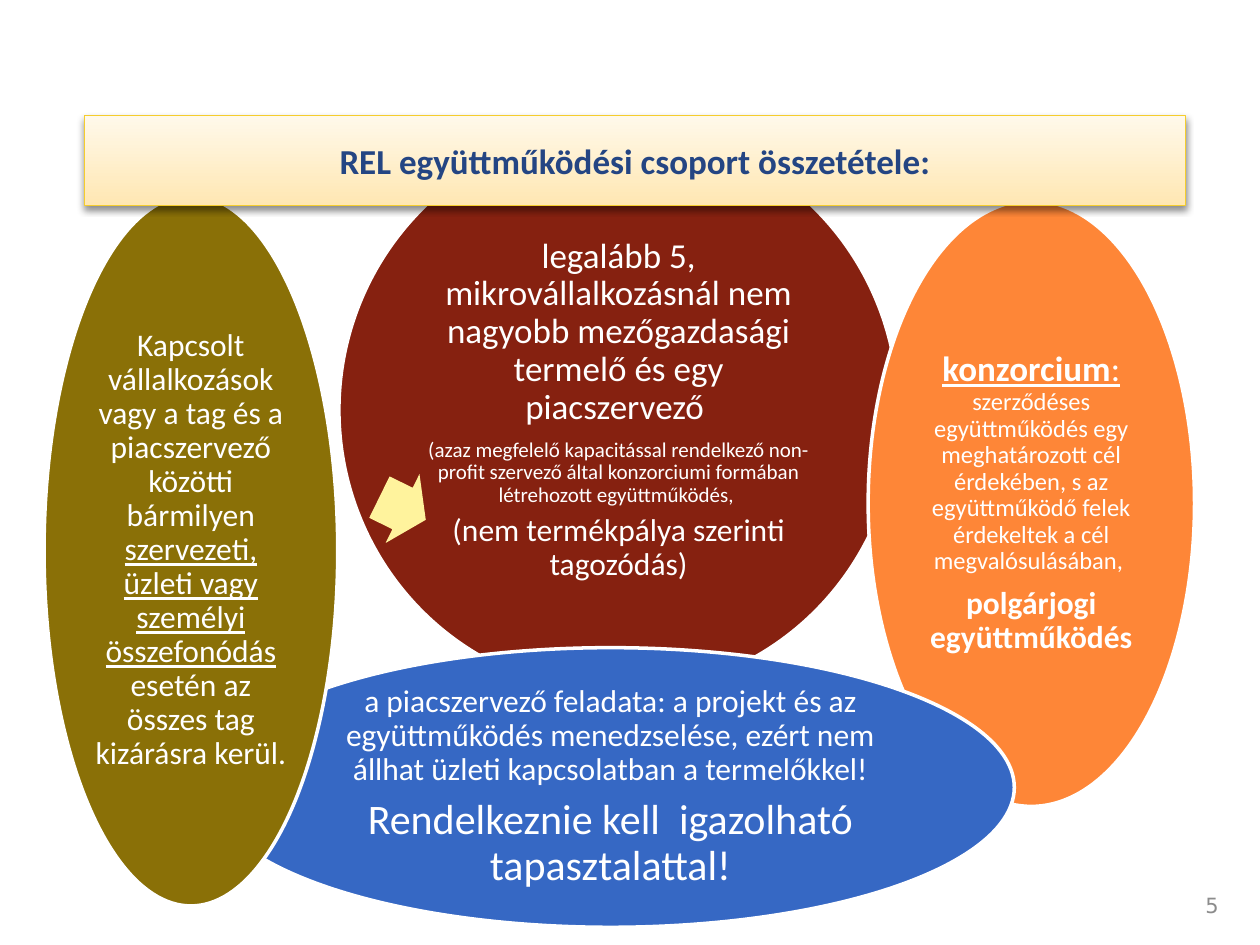
"""Build the slide on the make-up of a REL cooperation group."""
from lxml.etree import SubElement
from pptx import Presentation
from pptx.dml.color import RGBColor
from pptx.enum.shapes import MSO_SHAPE as Shape
from pptx.enum.text import MSO_ANCHOR as Anchor, PP_ALIGN as Align
from pptx.oxml.ns import qn
from pptx.util import Pt


def color(value):
    return RGBColor.from_string(value)


def write(para, text, size, ink="FFFFFF", face="Calibri", bold=False, underline=False):
    span = para.add_run()
    span.text = text
    font = span.font
    font.name, font.size, font.bold, font.underline = face, Pt(size), bold, underline
    font.color.rgb = color(ink)


deck = Presentation()
deck.slide_width, deck.slide_height = Pt(720), Pt(540)
page = deck.slides.add_slide(deck.slide_layouts[6])

ellipses = [
    ((193.7, 72.7, 319.7, 323.3), "862110", [
        [("legalább 5, mikrovállalkozásnál nem nagyobb mezőgazdasági termelő és egy piacszervező ", 20, {})],
        [("(azaz megfelelő kapacitással rendelkező non-profit szervező által konzorciumi formában "
          "létrehozott együttműködés, ", 12, {})],
        [("(nem termékpálya szerinti tagozódás)", 18, {})],
    ]),
    ((496.1, 114.5, 186.5, 346.3), "FE8637", [
        [("konzorcium", 20, {"bold": True, "underline": True}),
         (":", 20, {"underline": True}),
         (" szerződéses együttműködés egy meghatározott cél érdekében, s az együttműködő felek "
          "érdekeltek a cél megvalósulásában, ", 14, {})],
        [("polgárjogi együttműködés", 18, {"bold": True})],
    ]),
    ((118.1, 370.1, 461.5, 159.8), "3668C4", [
        [("a piacszervező feladata: a projekt és az együttműködés menedzselése, ezért nem állhat "
          "üzleti kapcsolatban a termelőkkel!", 18, {})],
        [("Rendelkeznie kell  igazolható tapasztalattal!", 24, {})],
    ]),
    ((25.2, 111.6, 167.8, 406.1), "8A7007", [
        [("Kapcsolt vállalkozások vagy a tag és a piacszervező közötti bármilyen ", 18, {}),
         ("szervezeti, üzleti vagy személyi összefonódás ", 18, {"underline": True}),
         ("esetén az összes tag kizárásra kerül.", 18, {})],
    ]),
]

for bounds, fill, paragraphs in ellipses:
    ellipse = page.shapes.add_shape(Shape.OVAL, *map(Pt, bounds))
    ellipse.shadow.inherit = False
    ellipse.fill.solid()
    ellipse.fill.fore_color.rgb = color(fill)
    ellipse.line.color.rgb = color("FFFFFF")
    ellipse.line.width = Pt(2)
    frame = ellipse.text_frame
    frame.word_wrap = True
    frame.vertical_anchor = Anchor.MIDDLE
    frame.margin_left = frame.margin_right = frame.margin_top = frame.margin_bottom = Pt(2)
    for index, spans in enumerate(paragraphs):
        para = frame.add_paragraph() if index else frame.paragraphs[0]
        para.alignment = Align.CENTER
        para.line_spacing = 0.9
        para.space_after = Pt(round(0.35 * spans[0][1], 1))
        for text, size, style in spans:
            write(para, text, size, **style)

arrow = page.shapes.add_shape(Shape.RIGHT_ARROW, Pt(215.3), Pt(268.6), Pt(29.5), Pt(43.9))
arrow.shadow.inherit = False
arrow.adjustments[0], arrow.adjustments[1] = 0.6, 0.5
arrow.rotation = 26.1
arrow.fill.solid()
arrow.fill.fore_color.rgb = color("FFF39D")
arrow.line.fill.background()

number = page.shapes.add_textbox(Pt(535.7), Pt(502.6), Pt(167.8), Pt(28.8)).text_frame
number.word_wrap = True
number.vertical_anchor = Anchor.MIDDLE
number.paragraphs[0].alignment = Align.RIGHT
write(number.paragraphs[0], "5", 12, ink="8C8C8C", face="DejaVu Sans")

banner = page.shapes.add_shape(Shape.RECTANGLE, Pt(48.2), Pt(66.2), Pt(629.3), Pt(51.1))
banner.fill.gradient()
banner.fill.gradient_angle = 270
for stop, tint in zip(banner.fill.gradient_stops, ("FFF9EA", "FFE7B3")):
    stop.color.rgb = color(tint)
banner.line.color.rgb = color("F5CD2D")
banner.line.width = Pt(0.75)
banner.shadow.inherit = False
effects = banner.element.spPr.find(qn("a:effectLst"))
shadow = SubElement(effects, qn("a:outerShdw"), blurRad=str(Pt(4)), dist=str(Pt(2)),
                    dir="5400000", rotWithShape="0")
shade = SubElement(shadow, qn("a:srgbClr"), val="000000")
SubElement(shade, qn("a:alpha"), val="45000")
title = banner.text_frame
title.word_wrap = True
title.vertical_anchor = Anchor.MIDDLE
title.paragraphs[0].alignment = Align.CENTER
write(title.paragraphs[0], "REL együttműködési csoport összetétele:", 20, ink="244583", bold=True)

deck.save("out.pptx")
